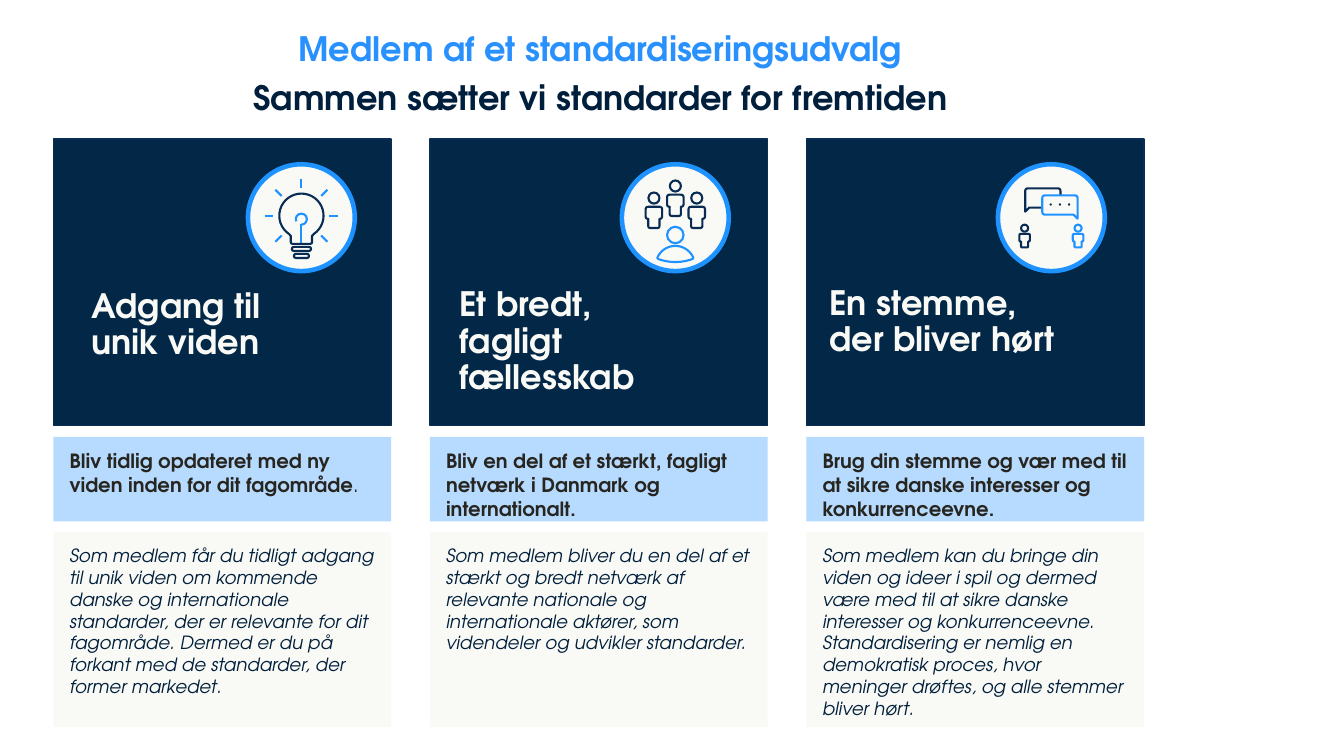
from dataclasses import dataclass
from math import cos, radians, sin
from typing import Callable

from pptx import Presentation
from pptx.dml.color import RGBColor
from pptx.enum.shapes import MSO_CONNECTOR, MSO_SHAPE
from pptx.enum.text import MSO_ANCHOR, MSO_AUTO_SIZE, PP_ALIGN
from pptx.oxml.ns import qn
from pptx.shapes.autoshape import Shape
from pptx.shapes.shapetree import GroupShapes
from pptx.slide import Slide
from pptx.text.text import TextFrame, _Paragraph
from pptx.util import Pt

FONT = "TeX Gyre Adventor"
NAVY = RGBColor(0x02, 0x27, 0x47)
OUTLINE_NAVY = RGBColor(0x08, 0x2C, 0x53)
TEXT_NAVY = RGBColor(0x00, 0x1F, 0x3C)
BLUE = RGBColor(0x1E, 0x92, 0xFF)
TITLE_BLUE = RGBColor(0x28, 0x91, 0xFE)
PALE_BLUE = RGBColor(0xB7, 0xDA, 0xFF)
OFF_WHITE = RGBColor(0xF9, 0xF9, 0xF5)
CHARCOAL = RGBColor(0x27, 0x25, 0x1F)

CARD_LEFT, CARD_PITCH, CARD_WIDTH = 38.2, 268.9, 241.2
BADGE_Y, BADGE_SIZE = 155.5, 76.3

Point = tuple[float, float]
Corner = tuple[float, float, float]


def style_shape(shape: Shape, fill: RGBColor | None, line: RGBColor | None = None,
                weight: float = 1.5) -> None:
    shape.shadow.inherit = False
    if fill is None:
        shape.fill.background()
    else:
        shape.fill.solid()
        shape.fill.fore_color.rgb = fill
    if line is None:
        shape.line.fill.background()
    else:
        shape.line.color.rgb = line
        shape.line.width = Pt(weight)


def add_run(paragraph: _Paragraph, text: str, size: float, color: RGBColor,
            bold: bool = False, italic: bool = False) -> None:
    run = paragraph.add_run()
    run.text = text
    run.font.name = FONT
    run.font.size = Pt(size)
    run.font.color.rgb = color
    run.font.bold = bold
    run.font.italic = italic


def arc_points(cx: float, cy: float, radius: float, start: int, end: int) -> list[Point]:
    """Points along a circle, in degrees clockwise from the right."""
    steps = 32
    angles = [radians(start + (end - start) * i / steps) for i in range(steps + 1)]
    return [(cx + radius * cos(a), cy + radius * sin(a)) for a in angles]


def round_corners(corners: list[Corner]) -> list[Point]:
    """Replace each (x, y, radius) corner by a short curve."""
    points: list[Point] = []
    for i, (x, y, radius) in enumerate(corners):
        ends = []
        for nx, ny, _ in (corners[i - 1], corners[(i + 1) % len(corners)]):
            share = radius / ((nx - x) ** 2 + (ny - y) ** 2) ** 0.5
            ends.append((x + (nx - x) * share, y + (ny - y) * share))
        (ax, ay), (bx, by) = ends
        for t in (0, 0.25, 0.5, 0.75, 1) if radius else (0,):
            a, c, b = (1 - t) ** 2, 2 * t * (1 - t), t * t
            points.append((a * ax + c * x + b * bx, a * ay + c * y + b * by))
    return points


@dataclass
class Icon:
    """Drawing area whose coordinates are points from the badge centre."""
    shapes: GroupShapes
    cx: float
    cy: float

    def preset(self, kind: MSO_SHAPE, x: float, y: float, w: float, h: float,
               line: RGBColor | None, fill: RGBColor | None = None,
               weight: float = 1.5) -> Shape:
        shape = self.shapes.add_shape(kind, Pt(self.cx + x), Pt(self.cy + y), Pt(w), Pt(h))
        style_shape(shape, fill, line, weight)
        return shape

    def stroke(self, start: Point, end: Point) -> None:
        (x1, y1), (x2, y2) = start, end
        connector = self.shapes.add_connector(
            MSO_CONNECTOR.STRAIGHT, Pt(self.cx + x1), Pt(self.cy + y1),
            Pt(self.cx + x2), Pt(self.cy + y2))
        connector.line.color.rgb = BLUE
        connector.line.width = Pt(1.5)
        properties = connector.element.spPr
        properties.append(properties.makeelement(qn("a:effectLst"), {}))

    def outline(self, points: list[Point], line: RGBColor,
                fill: RGBColor | None = None) -> None:
        first, *rest = [(Pt(self.cx + x), Pt(self.cy + y)) for x, y in points]
        builder = self.shapes.build_freeform(*first)
        builder.add_line_segments(rest)
        style_shape(builder.convert_to_shape(), fill, line)

    def person(self, x: float, top: float, scale: float, color: RGBColor) -> None:
        head = 7.9 * scale
        self.preset(MSO_SHAPE.OVAL, x - head / 2, top, head, head, color)
        right = [(5.9, 0, 2), (5.9, 8.7, 2), (4, 8.7, 0), (4, 15.2, 1.5)]
        left = [(-px, py, r) for px, py, r in reversed(right)]
        body = [(x + px * scale, top + (py + 10.2) * scale, r * scale)
                for px, py, r in right + left]
        self.outline(round_corners(body), color)


def draw_light_bulb(icon: Icon) -> None:
    icon.stroke((0, 18.7), (0, 4.3))
    hook = icon.preset(MSO_SHAPE.ARC, -4, -2.9, 7.9, 7.9, BLUE)
    hook.adjustments[0], hook.adjustments[1] = 94.13, 56.57
    for angle in range(135, 406, 45):
        dx, dy = cos(radians(angle)), sin(radians(angle))
        icon.stroke((26.3 * dx, 26.3 * dy - 1.4), (20 * dx, 20 * dy - 1.4))
    neck = round_corners([(7.6, 13, 0), (7.6, 18.7, 1.4), (-7.6, 18.7, 1.4), (-7.6, 13, 0)])
    icon.outline(arc_points(0, -1.4, 15.8, 124, 416) + neck, OUTLINE_NAVY)
    for width, top in ((13.7, 20.9), (10.8, 25.9)):
        cap = icon.preset(MSO_SHAPE.ROUNDED_RECTANGLE, -width / 2, top, width, 2.9,
                          OUTLINE_NAVY)
        cap.adjustments[0] = 0.5


def draw_community(icon: Icon) -> None:
    for x, top in ((-15.3, -18), (0, -26.6), (15.3, -18)):
        icon.person(x, top, 1, OUTLINE_NAVY)
    icon.preset(MSO_SHAPE.OVAL, -5.9, 6.5, 11.8, 11.8, BLUE)
    icon.outline(arc_points(0, 34.2, 14, 203, 337) + arc_points(0, -4, 35.7, 70, 110), BLUE)


def draw_dialogue(icon: Icon) -> None:
    for side, drop, color, fill in ((1, 0, OUTLINE_NAVY, None), (-1, 5, BLUE, OFF_WHITE)):
        icon.person(-19.1 * side, 5, 0.64, color)
        bubble = [(-18.7, -20.9, 2), (6.5, -20.9, 2), (6.5, -7.2, 2),
                  (-15.8, -7.2, 0), (-18.7, -4.3, 0)]
        icon.outline(round_corners([(x * side, y + drop, r) for x, y, r in bubble]),
                     color, fill)
    for i in range(3):
        icon.preset(MSO_SHAPE.OVAL, -1.3 + 6.6 * i, -10.2, 1.6, 1.6, None, NAVY)


@dataclass
class Card:
    heading: str
    heading_box: tuple[float, float, float]  # left, top, width
    badge_x: float
    draw_icon: Callable[[Icon], None]
    benefit: str
    details: str
    ending: str = ""


CARDS = [
    Card("Adgang til unik viden", (58.3, 203, 142.6), 215.3, draw_light_bulb,
         "Bliv tidlig opdateret med ny viden inden for dit fagområde",
         "Som medlem får du tidligt adgang til unik viden om kommende danske og "
         "internationale standarder, der er relevante for dit fagområde. Dermed er du på "
         "forkant med de standarder, der former markedet.", "."),
    Card("Et bredt, fagligt fællesskab", (321.1, 202, 169.2), 482.4, draw_community,
         "Bliv en del af et stærkt, fagligt netværk i Danmark og internationalt.",
         "Som medlem bliver du en del af et stærkt og bredt netværk af relevante nationale "
         "og internationale aktører, som videndeler og udvikler standarder."),
    Card("En stemme, der bliver hørt", (585.4, 200.8, 176.4), 751, draw_dialogue,
         "Brug din stemme og vær med til at sikre danske interesser og konkurrenceevne.",
         "Som medlem kan du bringe din viden og ideer i spil og dermed være med til at sikre "
         "danske interesser og konkurrenceevne. Standardisering er nemlig en demokratisk "
         "proces, hvor meninger drøftes, og alle stemmer bliver hørt."),
]


def add_panel(slide: Slide, left: float, top: float, height: float, fill: RGBColor,
              line: RGBColor | None = None) -> TextFrame:
    panel = slide.shapes.add_shape(MSO_SHAPE.RECTANGLE, Pt(left), Pt(top),
                                   Pt(CARD_WIDTH), Pt(height))
    style_shape(panel, fill, line, 1)
    frame = panel.text_frame
    frame.word_wrap = True
    frame.vertical_anchor = MSO_ANCHOR.TOP
    frame.margin_left = frame.margin_right = Pt(11.5)
    frame.margin_top = frame.margin_bottom = Pt(8.6)
    frame.paragraphs[0].alignment = PP_ALIGN.LEFT
    return frame


def add_card(slide: Slide, card: Card, left: float) -> None:
    add_panel(slide, left, 99.4, 204.5, NAVY, OUTLINE_NAVY)
    x, y, width = card.heading_box
    heading = slide.shapes.add_textbox(Pt(x), Pt(y), Pt(width), Pt(60)).text_frame
    heading.word_wrap = True
    heading.paragraphs[0].line_spacing = 0.9
    add_run(heading.paragraphs[0], card.heading, 24, OFF_WHITE, bold=True)

    benefit = add_panel(slide, left, 312, 60.5, PALE_BLUE).paragraphs[0]
    benefit.line_spacing = Pt(17)
    add_run(benefit, card.benefit, 14, CHARCOAL, bold=True)
    if card.ending:
        add_run(benefit, card.ending, 14, CHARCOAL)
    details = add_panel(slide, left, 380.2, 139, OFF_WHITE).paragraphs[0]
    add_run(details, card.details, 13, TEXT_NAVY, italic=True)

    icon = Icon(slide.shapes.add_group_shape().shapes, card.badge_x, BADGE_Y)
    icon.preset(MSO_SHAPE.OVAL, -BADGE_SIZE / 2, -BADGE_SIZE / 2, BADGE_SIZE, BADGE_SIZE,
                BLUE, OFF_WHITE, 3.25)
    card.draw_icon(icon)


def add_title(slide: Slide) -> None:
    title = slide.shapes.title
    title.left, title.top, title.width, title.height = Pt(39.6), Pt(16.6), Pt(778.3), Pt(71.3)
    frame = title.text_frame
    frame.auto_size = MSO_AUTO_SIZE.NONE
    frame.vertical_anchor = MSO_ANCHOR.TOP
    lines = (("Medlem af et standardiseringsudvalg", TITLE_BLUE),
             ("Sammen sætter vi standarder for fremtiden", TEXT_NAVY))
    for i, (text, color) in enumerate(lines):
        paragraph = frame.add_paragraph() if i else frame.paragraphs[0]
        paragraph.alignment = PP_ALIGN.CENTER
        paragraph.space_after = Pt(6)
        add_run(paragraph, text, 24, color, bold=True)


def main() -> None:
    presentation = Presentation()
    presentation.slide_width, presentation.slide_height = Pt(960), Pt(540)
    slide = presentation.slides.add_slide(presentation.slide_layouts[5])
    add_title(slide)
    for i, card in enumerate(CARDS):
        add_card(slide, card, CARD_LEFT + CARD_PITCH * i)
    presentation.save("out.pptx")


if __name__ == "__main__":
    main()
